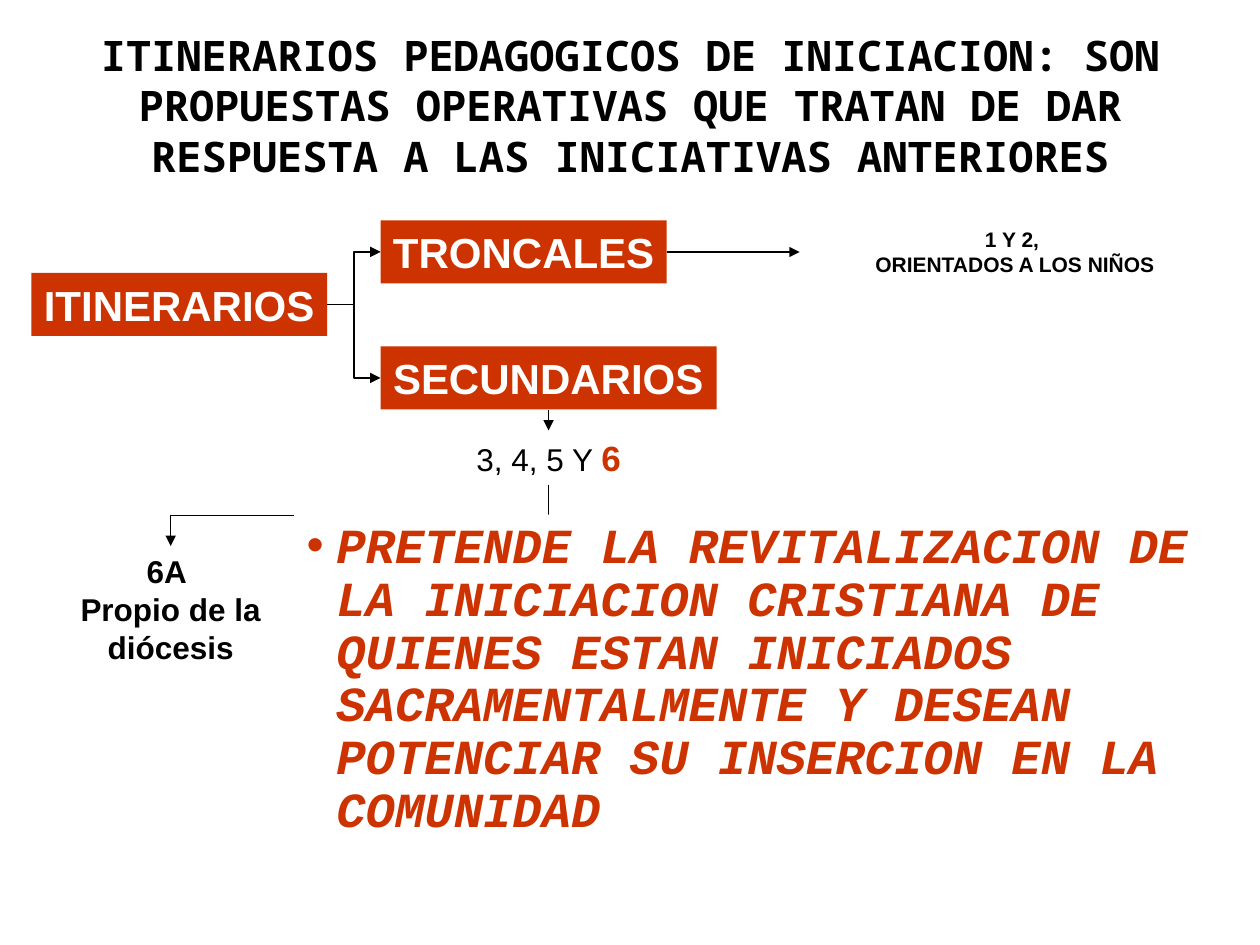
from lxml import etree
from pptx import Presentation
from pptx.dml.color import RGBColor
from pptx.enum.shapes import MSO_CONNECTOR, MSO_SHAPE
from pptx.enum.text import MSO_ANCHOR, MSO_AUTO_SIZE, PP_ALIGN
from pptx.oxml.ns import qn
from pptx.util import Pt

STRAIGHT, ELBOW = MSO_CONNECTOR.STRAIGHT, MSO_CONNECTOR.ELBOW
RECTANGLE = MSO_SHAPE.RECTANGLE
LEFT, CENTER = PP_ALIGN.LEFT, PP_ALIGN.CENTER
TOP, MIDDLE = MSO_ANCHOR.TOP, MSO_ANCHOR.MIDDLE
NO_FIT = MSO_AUTO_SIZE.NONE
COLORS = {"red": "CC3300", "white": "FFFFFF", "black": "000000"}


def write(shape, text, size, color, align, font="Arial", bold=True):
    shape.text_frame.text = text
    for para in shape.text_frame.paragraphs:
        para.alignment = align
        for span in para.runs:
            span.font.name, span.font.size, span.font.bold = font, Pt(size), bold
            span.font.color.rgb = RGBColor.from_string(COLORS[color])


def add_arrow(kind, x1, y1, x2, y2):
    arrow = page.shapes.add_connector(kind, Pt(x1), Pt(y1), Pt(x2), Pt(y2))
    arrow.line.width = Pt(0.75)
    arrow.line.color.rgb = RGBColor.from_string(COLORS["black"])
    etree.SubElement(arrow.line._get_or_add_ln(), qn("a:tailEnd"), type="triangle")
    etree.SubElement(arrow._element.spPr, qn("a:effectLst"))
    return arrow


deck = Presentation()
deck.slide_width, deck.slide_height = Pt(720), Pt(540)
page = deck.slides.add_slide(deck.slide_layouts[1])

# Title
title = page.shapes.title
title.left, title.top, title.width, title.height = Pt(18), Pt(18), Pt(684), Pt(84)
write(title, "ITINERARIOS PEDAGOGICOS DE INICIACION: SON PROPUESTAS OPERATIVAS "
      "QUE TRATAN DE DAR RESPUESTA A LAS INICIATIVAS ANTERIORES",
      24, "black", CENTER, "Noto Sans Mono")
title.text_frame.vertical_anchor = MIDDLE
title.text_frame.auto_size = NO_FIT

# Red boxes
boxes = {}
for name, left, top, width in [
    ("ITINERARIOS", 18, 156, 169),
    ("TRONCALES", 217.5, 126, 163.5),
    ("SECUNDARIOS", 217.5, 198, 192),
]:
    box = page.shapes.add_shape(RECTANGLE, Pt(left), Pt(top), Pt(width), Pt(36))
    box.shadow.inherit = False
    box.fill.solid()
    box.fill.fore_color.rgb = RGBColor.from_string(COLORS["red"])
    box.line.fill.background()
    write(box, name, 24, "white", LEFT)
    box.text_frame.word_wrap = False
    boxes[name] = box

# Plain labels
labels = {}
for name, text, left, top, width, height, size, bold in [
    ("children", "1 Y 2, \nORIENTADOS A LOS NIÑOS", 457, 126, 246, 36, 12, True),
    ("numbers", "3, 4, 5 Y ", 217.5, 246, 192, 31, 18, False),
    ("diocese", "6A \nPropio de la diócesis", 37.5, 312, 120, 72, 18, True),
]:
    label = page.shapes.add_textbox(Pt(left), Pt(top), Pt(width), Pt(height))
    write(label, text, size, "black", CENTER, bold=bold)
    label.text_frame.word_wrap = True
    labels[name] = label

six = labels["numbers"].text_frame.paragraphs[0].add_run()
six.text = "6"
six.font.name, six.font.size, six.font.bold = "Arial", Pt(20), True
six.font.color.rgb = RGBColor.from_string(COLORS["red"])

# Arrows joining boxes and labels
root, main, second = boxes.values()
for kind, start, start_side, end, end_side in [
    (ELBOW, root, 3, main, 1),
    (ELBOW, root, 3, second, 1),
    (STRAIGHT, main, 3, labels["children"], 1),
    (STRAIGHT, second, 2, labels["numbers"], 0),
]:
    arrow = add_arrow(kind, 0, 0, 0, 0)
    arrow.begin_connect(start, start_side)
    arrow.end_connect(end, end_side)

# Stem below the numbers, and its branch turned a quarter to the diocese label
stem = add_arrow(STRAIGHT, 313.5, 277, 313.5, 312)
stem.begin_connect(labels["numbers"], 2)
branch = add_arrow(ELBOW, 188, 186.5, 223, 402.5)
branch._element.spPr.find(qn("a:xfrm")).set("rot", str(90 * 60000))

# Red bullet on a white panel, in front of the stem
body = page.placeholders[1]
body.left, body.top, body.width, body.height = Pt(168), Pt(294), Pt(528), Pt(189)
body.fill.solid()
body.fill.fore_color.rgb = RGBColor.from_string(COLORS["white"])
write(body, "PRETENDE LA REVITALIZACION DE LA INICIACION CRISTIANA DE QUIENES "
      "ESTAN INICIADOS SACRAMENTALMENTE Y DESEAN POTENCIAR SU INSERCION "
      "EN LA COMUNIDAD", 28, "red", LEFT, "Courier New")
body.text_frame.vertical_anchor = TOP
body.text_frame.auto_size = NO_FIT
para = body.text_frame.paragraphs[0]
para.line_spacing = 0.9
para.runs[0].font.italic = True
properties = para._p.get_or_add_pPr()
properties.set("marL", str(Pt(17)))
properties.set("indent", str(-Pt(17)))
etree.SubElement(properties, qn("a:buFont"), typeface="Arial")
etree.SubElement(properties, qn("a:buChar"), char="•")
page.shapes._spTree.append(body._element)

deck.save("out.pptx")
